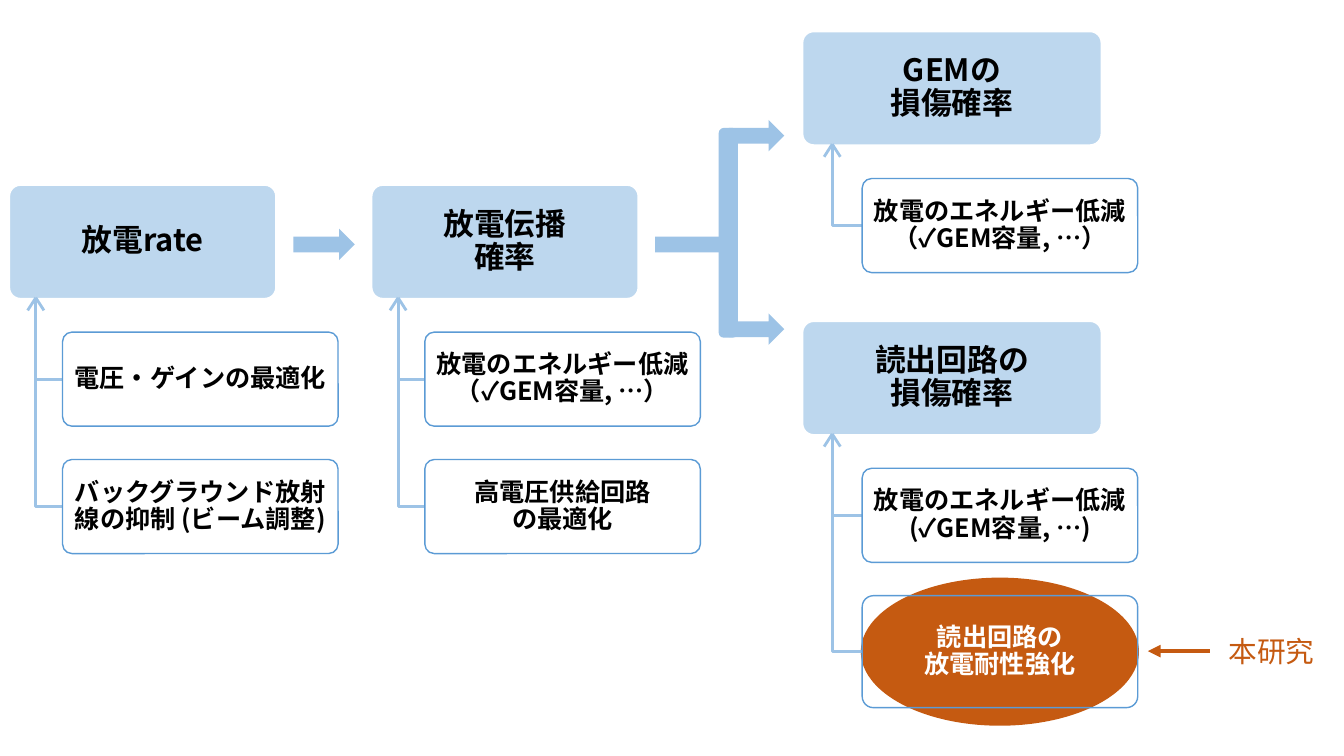
"""Build a slide on the stages of discharge damage and the measures against each."""
from dataclasses import dataclass

from lxml import etree
from pptx import Presentation
from pptx.dml.color import RGBColor
from pptx.enum import shapes, text
from pptx.oxml.ns import qn
from pptx.util import Pt


@dataclass(frozen=True)
class Theme:
    """Colours, fonts and type sizes of the slide."""

    stage: str = "BDD7EE"
    flow: str = "9DC3E6"
    outline: str = "5B9BD5"
    accent: str = "C55A11"
    white: str = "FFFFFF"
    black: str = "000000"
    font: str = "Noto Sans CJK JP"
    label_font: str = "Calibri"
    stage_size: float = 22
    measure_size: float = 18
    label_size: float = 20.5


THEME = Theme()
SHAPE = shapes.MSO_SHAPE
STAGE_HEIGHT = 81.5
MEASURE_WIDTH, MEASURE_HEIGHT = 196.8, 67.2
MEASURE_OFFSET, MEASURE_PITCH = 105.2, 91
LESS_ENERGY = "放電のエネルギー低減\v（✓GEM容量, …）"
STAGES = [
    (6.5, 132, 190.8, "放電rate",
     ["電圧・ゲインの最適化", "バックグラウンド放射線の抑制 (ビーム調整)"]),
    (265.3, 132, 190.8, "放電伝播\v確率",
     [LESS_ENERGY, "高電圧供給回路\vの最適化"]),
    (573.1, 22.3, 213.8, "GEMの\v損傷確率", [LESS_ENERGY]),
    (573.1, 229.3, 213.8, "読出回路の\v損傷確率",
     ["放電のエネルギー低減\v(✓GEM容量, …)"]),
]
FLOW_ARROWS = [
    (209.5, 163.4, 43.9),
    (520.6, 85.7, 39.6),
    (520.6, 223.9, 39.6),
    (468, 163.4, 59),
]


def apply(target, **values):
    """Set several attributes of one object."""
    for name, value in values.items():
        setattr(target, name, value)


def paint(shape, fill=None, line=None, line_width=1.0, alpha=None):
    """Give a shape its fill and outline, without a shadow."""
    shape.shadow.inherit = False
    if fill:
        shape.fill.solid()
        shape.fill.fore_color.rgb = RGBColor.from_string(fill)
    else:
        shape.fill.background()
    if alpha:
        colour = shape._element.spPr.find(qn("a:solidFill")).find(qn("a:srgbClr"))
        etree.SubElement(colour, qn("a:alpha"), val=str(alpha * 1000))
    if line:
        shape.line.color.rgb = RGBColor.from_string(line)
        shape.line.width = Pt(line_width)
    else:
        shape.line.fill.background()


def add_block(slide, kind, left, top, width, height, adjust=None, **look):
    """Add a painted preset shape."""
    block = slide.shapes.add_shape(kind, Pt(left), Pt(top), Pt(width), Pt(height))
    if adjust is not None:
        block.adjustments[0] = adjust
    paint(block, **look)
    return block


def write(block, words, size, color, font=THEME.font, bold=True):
    """Write one paragraph into a block."""
    paragraph = block.text_frame.paragraphs[0]
    paragraph.text = words
    for run in paragraph.runs:
        apply(run.font, size=Pt(size), bold=bold, name=font)
        run.font.color.rgb = RGBColor.from_string(color)
        etree.SubElement(run._r.get_or_add_rPr(), qn("a:ea"), typeface=THEME.font)
    return paragraph


def add_card(slide, box, words, size, color, **look):
    """Add a rounded box with centred text."""
    card = add_block(slide, SHAPE.ROUNDED_RECTANGLE, *box, adjust=0.1, **look)
    apply(card.text_frame, word_wrap=True, vertical_anchor=text.MSO_ANCHOR.MIDDLE,
          margin_left=Pt(3), margin_right=Pt(3), margin_top=Pt(2), margin_bottom=Pt(2))
    paragraph = write(card, words, size, color)
    apply(paragraph, alignment=text.PP_ALIGN.CENTER, line_spacing=0.9)


def add_line(slide, start, end, color, width, arrow=False):
    """Add a straight line, with an arrowhead at its end if asked."""
    line = slide.shapes.add_connector(
        shapes.MSO_CONNECTOR.STRAIGHT, *map(Pt, start + end))
    line.line.color.rgb = RGBColor.from_string(color)
    line.line.width = Pt(width)
    if arrow:
        outline = line._element.spPr.find(qn("a:ln"))
        etree.SubElement(outline, qn("a:tailEnd"), type="triangle")
    etree.SubElement(line._element.spPr, qn("a:effectLst"))


def add_branch(slide, trunk, top, right, bottom):
    """Add the bent line from a stage down to one measure."""
    builder = slide.shapes.build_freeform(Pt(trunk), Pt(top))
    builder.add_line_segments(
        [(Pt(trunk), Pt(bottom)), (Pt(right), Pt(bottom))], close=False)
    paint(builder.convert_to_shape(), line=THEME.flow, line_width=2)


def add_measure(slide, stage, index, words, height=MEASURE_HEIGHT,
                color=THEME.black, **look):
    """Add one measure under a stage, with its branch."""
    left, top, width = stage[:3]
    measure_left = left + width * 0.2
    measure_top = top + MEASURE_OFFSET + index * MEASURE_PITCH
    add_branch(slide, left + width * 0.1, top + STAGE_HEIGHT,
               measure_left, measure_top + height / 2)
    add_card(slide, (measure_left, measure_top, MEASURE_WIDTH, height), words,
             THEME.measure_size, color, line=THEME.outline, **look)


def add_stage(slide, stage):
    """Add a stage with its measures and the open arrowhead below it."""
    left, top, width, title, measures = stage
    add_card(slide, (left, top, width, STAGE_HEIGHT), title, THEME.stage_size,
             THEME.black, fill=THEME.stage, line=THEME.white, line_width=1.5)
    for index, words in enumerate(measures):
        add_measure(slide, stage, index, words, fill=THEME.white, alpha=90)
    trunk, tip = left + width * 0.1, top + STAGE_HEIGHT - 0.8
    for side in (-5.8, 5.8):
        add_line(slide, (trunk + side, tip + 9), (trunk, tip), THEME.flow, 2)


def add_flow(slide):
    """Add the block arrows between stages and the bar where they fork."""
    for left, top, width in FLOW_ARROWS:
        add_block(slide, SHAPE.RIGHT_ARROW, left, top, width, 22.5, fill=THEME.flow)
    add_block(slide, SHAPE.ROUNDED_RECTANGLE, 513.4, 91.4, 13.6, 149.8,
              adjust=0.262, fill=THEME.flow)


def add_study_label(slide):
    """Add the label that points at the subject of this study."""
    add_line(slide, (864, 465.1), (820, 465.1), THEME.accent, 3, arrow=True)
    label = slide.shapes.add_textbox(Pt(870.5), Pt(449.3), Pt(78.5), Pt(33))
    label.text_frame.word_wrap = False
    write(label, "本研究", THEME.label_size, THEME.accent, THEME.label_font, False)


def main():
    """Build and save the slide."""
    deck = Presentation()
    apply(deck, slide_width=Pt(960), slide_height=Pt(540))
    slide = deck.slides.add_slide(deck.slide_layouts[6])
    add_block(slide, SHAPE.OVAL, 614.9, 412.6, 198.7, 105.8, fill=THEME.accent)
    for stage in STAGES:
        add_stage(slide, stage)
    add_measure(slide, STAGES[-1], 1, "読出回路の\v放電耐性強化", height=80,
                color=THEME.white)
    add_flow(slide)
    add_study_label(slide)
    deck.save("out.pptx")


if __name__ == "__main__":
    main()
